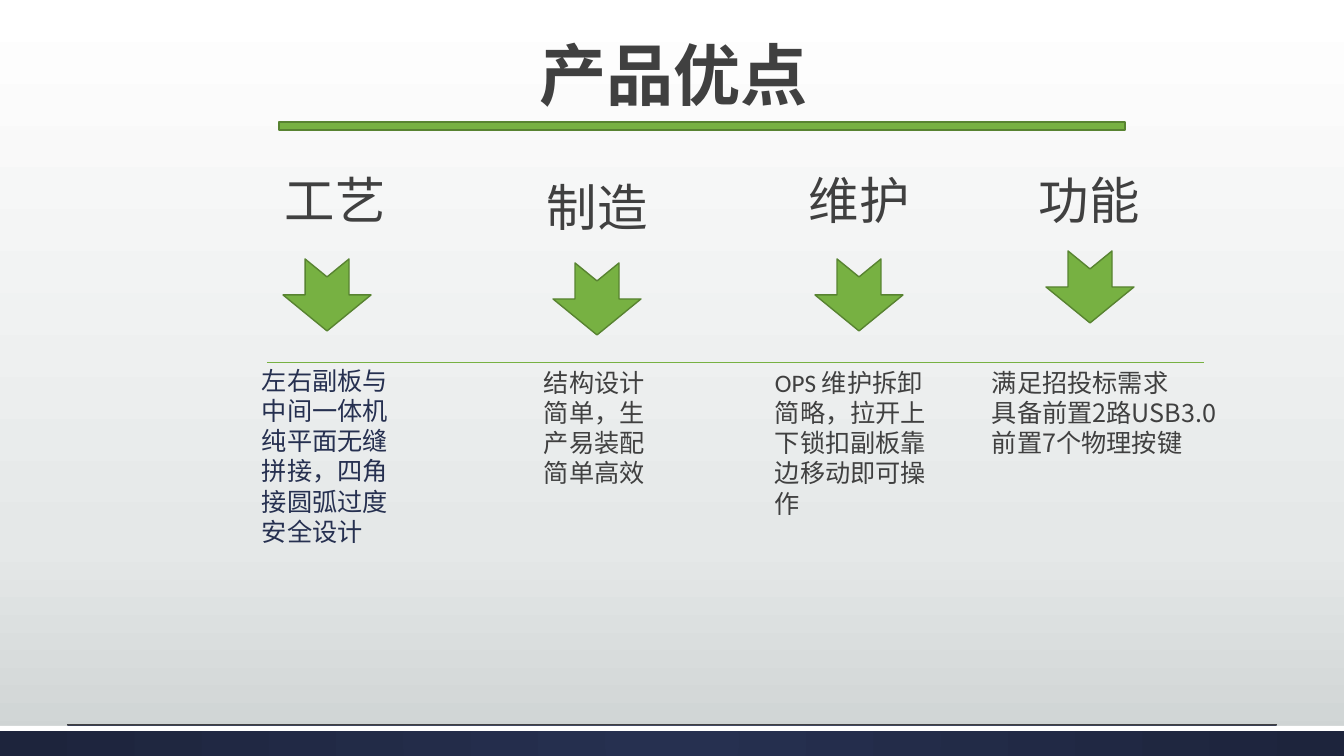
import pptx
import pptx.util
import pptx.dml.color
import pptx.enum.shapes
import pptx.enum.text
import pptx.oxml
import pptx.oxml.ns

RGBColor = pptx.dml.color.RGBColor
qn = pptx.oxml.ns.qn
SHAPES = pptx.enum.shapes.MSO_SHAPE

EMU_PER_PX = 914400 / 100.8
LATIN_FONT = "Calibri"
CJK_FONT = "Noto Sans CJK SC"

GREEN = RGBColor(0x77, 0xB1, 0x42)
DARK_GREEN = RGBColor(0x58, 0x83, 0x31)
GREY = RGBColor(0x40, 0x40, 0x40)
NAVY = RGBColor(0x26, 0x30, 0x50)
DEEP_NAVY = RGBColor(0x1D, 0x24, 0x3C)
WHITE = RGBColor(0xFF, 0xFF, 0xFF)
PALE_GREY = RGBColor(0xE5, 0xE8, 0xE8)
COOL_GREY = RGBColor(0xCD, 0xD2, 0xD2)

DOWNWARD = '<a:lin ang="5400000" scaled="0"/>'
FROM_CENTRE = (
    '<a:path path="circle">'
    '<a:fillToRect l="50000" t="50000" r="50000" b="50000"/></a:path>'
)

HEADINGS = [
    ("工艺", 275, 164, 327, 295),
    ("制造", 537, 171, 597, 299),
    ("维护", 799, 164, 859, 295),
    ("功能", 1029, 164, 1090, 287),
]
DETAILS = [
    (["左右副板与中间一体机纯平面无缝拼接，四角接圆弧过度安全设计"],
     (252, 360, 150, 194), NAVY),
    (["结构设计简单，生产易装配简单高效"], (534, 362, 143, 132), GREY),
    (["OPS 维护拆卸简略，拉开上下锁扣副板靠边移动即可操作"],
     (765, 362, 190, 162), GREY),
    (["满足招投标需求",
      [("具备前置", LATIN_FONT), ("2", CJK_FONT),
       ("路", LATIN_FONT), ("USB3.0", CJK_FONT)],
      [("前置7个物理按键", CJK_FONT)]],
     (982, 362, 272, 132), GREY),
]


def px(length):
    return pptx.util.Emu(round(length * EMU_PER_PX))


def place(left, top, width, height):
    return px(left), px(top), px(width), px(height)


def set_gradient(fill, holder, stops, direction):
    fill.solid()
    stop_xml = "".join(
        f'<a:gs pos="{percent * 1000}"><a:srgbClr val="{color}"/></a:gs>'
        for percent, color in stops
    )
    gradient = pptx.oxml.parse_xml(
        f'<a:gradFill {pptx.oxml.ns.nsdecls("a")} rotWithShape="1">'
        f"<a:gsLst>{stop_xml}</a:gsLst>{direction}</a:gradFill>"
    )
    holder.replace(holder.find(qn("a:solidFill")), gradient)


def write_text(box, paragraphs, *, size, color, font=LATIN_FONT, bold=False, wrap=True,
               align=pptx.enum.text.PP_ALIGN.LEFT):
    frame = box.text_frame
    frame.word_wrap = wrap
    frame.auto_size = pptx.enum.text.MSO_AUTO_SIZE.NONE
    frame.vertical_anchor = pptx.enum.text.MSO_ANCHOR.TOP
    for index, content in enumerate(paragraphs):
        para = frame.add_paragraph() if index else frame.paragraphs[0]
        para.alignment = align
        para.line_spacing = pptx.util.Pt(size * 1.2)
        spans = [(content, font)] if isinstance(content, str) else content
        for text, typeface in spans:
            span = para.add_run()
            span.text = text
            span.font.size = pptx.util.Pt(size)
            span.font.bold = bold
            span.font.color.rgb = color
            span.font.name = typeface
            east_asian = pptx.oxml.parse_xml(
                f'<a:ea {pptx.oxml.ns.nsdecls("a")} typeface="{CJK_FONT}"/>'
            )
            span.font._element.find(qn("a:latin")).addnext(east_asian)


def add_text(page, area, paragraphs, **text_format):
    write_text(page.shapes.add_textbox(*place(*area)), paragraphs, **text_format)


def add_block(page, kind, area, fill, outline=None):
    block = page.shapes.add_shape(kind, *place(*area))
    block.shadow.inherit = False
    block.fill.solid()
    block.fill.fore_color.rgb = fill
    if outline is None:
        block.line.fill.background()
    else:
        block.line.color.rgb = outline
        block.line.width = pptx.util.Pt(1)
    return block


def add_rule(page, left, right, top, color, width):
    rule = page.shapes.add_connector(
        pptx.enum.shapes.MSO_CONNECTOR.STRAIGHT, px(left), px(top), px(right), px(top)
    )
    rule.line.color.rgb = color
    rule.line.width = pptx.util.Pt(width)
    rule.element.spPr.append(
        pptx.oxml.parse_xml(f'<a:effectLst {pptx.oxml.ns.nsdecls("a")}/>')
    )


def add_down_arrow(page, centre_x, centre_y):
    length, breadth = 72, 88
    area = (centre_x - length // 2, centre_y - breadth // 2, length, breadth)
    arrow = add_block(page, SHAPES.NOTCHED_RIGHT_ARROW, area, GREEN, DARK_GREEN)
    arrow.rotation = 90


def add_backdrop(page):
    fill = page.background.fill
    fill.solid()
    set_gradient(fill, page.element.find(".//" + qn("p:bgPr")),
                 [(0, WHITE), (72, PALE_GREY), (100, COOL_GREY)], DOWNWARD)
    add_rule(page, 67, 1277, 725, GREY, 0.75)
    footer = add_block(page, SHAPES.RECTANGLE, (0, 726, 1344, 30), NAVY)
    set_gradient(footer.fill, footer.element.spPr,
                 [(0, NAVY), (100, DEEP_NAVY)], FROM_CENTRE)
    add_block(page, SHAPES.RECTANGLE, (0, 726, 1344, 5), WHITE)


def add_title(page, text):
    title = page.shapes.title
    title.left, title.top, title.width, title.height = place(529, 28, 289, 92)
    write_text(title, [text], size=48, color=GREY, font=CJK_FONT, bold=True,
               wrap=False, align=pptx.enum.text.PP_ALIGN.CENTER)
    add_block(page, SHAPES.RECTANGLE, (279, 122, 846, 8), GREEN, DARK_GREEN)


def main():
    deck = pptx.Presentation()
    deck.slide_width, deck.slide_height = px(1344), px(756)
    page = deck.slides.add_slide(deck.slide_layouts[5])
    add_backdrop(page)
    add_title(page, "产品优点")
    for heading, left, top, arrow_x, arrow_y in HEADINGS:
        add_text(page, (left, top, 121, 72), [heading], size=36, color=GREY)
        add_down_arrow(page, arrow_x, arrow_y)
    for paragraphs, area, color in DETAILS:
        add_text(page, area, paragraphs, size=18, color=color)
    add_rule(page, 267, 1204, 362, GREEN, 0.5)
    deck.save("out.pptx")


if __name__ == "__main__":
    main()
